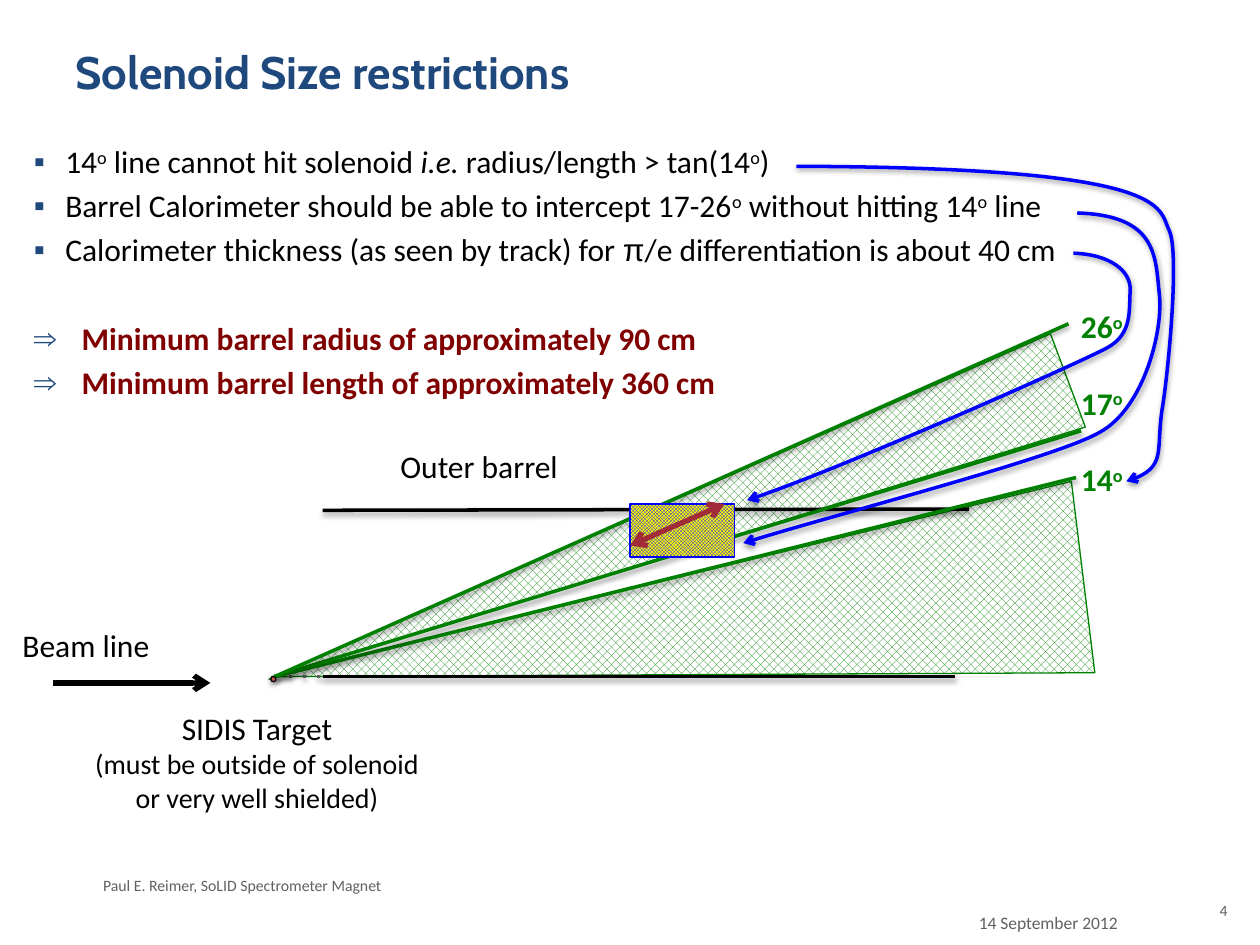
import lxml.etree
import pptx
import pptx.dml.color
import pptx.enum.dml
import pptx.enum.shapes
import pptx.enum.text
import pptx.oxml.ns
import pptx.util

COLUMNS, ROWS = 10, 7.5
CELL = pptx.util.Inches(1)
GREEN, BLUE, BLACK, GREY, NAVY = "008000", "0000FF", "000000", "616161", "1F497D"
ALIGN = pptx.enum.text.PP_ALIGN
PATTERN = pptx.enum.dml.MSO_PATTERN
SHAPE = pptx.enum.shapes.MSO_SHAPE


def grid(*cells):
    """Turn grid cells into slide lengths."""
    return [pptx.util.Emu(round(cell * CELL)) for cell in cells]


def colour(value):
    """Turn a hex string into a colour."""
    return pptx.dml.color.RGBColor.from_string(value)


def add_element(parent, tag, **attributes):
    """Append a drawing element to its parent."""
    child = lxml.etree.SubElement(parent, pptx.oxml.ns.qn(tag))
    for name, value in attributes.items():
        child.set(name, str(value))
    return child


def style_outline(shape, line_colour, width, ends=(), shadow=False, dash=None):
    """Set the line, arrowheads and shadow of a shape."""
    shape.line.color.rgb = colour(line_colour)
    shape.line.width = pptx.util.Pt(width)
    outline = shape.line._get_or_add_ln()
    if dash:
        add_element(outline, "a:prstDash", val=dash)
    for end in ends:
        add_element(outline, f"a:{end}End", type="arrow")
    effects = add_element(shape._element.spPr, "a:effectLst")
    if shadow:
        outer = add_element(effects, "a:outerShdw", blurRad=pptx.util.Pt(3.1),
                            dist=pptx.util.Pt(1.6), dir=5400000, rotWithShape=0)
        add_element(add_element(outer, "a:srgbClr", val=BLACK), "a:alpha", val=38000)


def add_line(page, start, finish, line_colour, width=2, **style):
    """Draw a straight line between two grid points."""
    line = page.shapes.add_connector(
        pptx.enum.shapes.MSO_CONNECTOR.STRAIGHT, *grid(*start, *finish))
    style_outline(line, line_colour, width, **style)


def add_patterned(page, kind, place, pattern, front, back, rotation=0):
    """Draw a shape with a pattern fill."""
    shape = page.shapes.add_shape(kind, *grid(*place))
    shape.rotation = rotation
    shape.fill.patterned()
    shape.fill.pattern = pattern
    shape.fill.fore_color.rgb = colour(front)
    shape.fill.back_color.rgb = colour(back)
    style_outline(shape, front, 0.75)


def add_curve(page, start, segments):
    """Draw a smooth arrow through cubic segments."""
    builder = page.shapes.build_freeform(*grid(*start), scale=1)
    builder.add_line_segments([grid(*segment[-1]) for segment in segments], close=False)
    curve = builder.convert_to_shape()
    straight = list(curve._element.spPr.iter(pptx.oxml.ns.qn("a:lnTo")))
    for part, segment in zip(straight, segments):
        bend = add_element(part.getparent(), "a:cubicBezTo")
        for point in segment:
            x, y = grid(*point)
            add_element(bend, "a:pt", x=x - curve.left, y=y - curve.top)
        part.getparent().remove(part)
    curve.fill.background()
    style_outline(curve, BLUE, 2, ends=["tail"], shadow=True)


def write_runs(para, text, size, text_colour, bold=False):
    """Write a paragraph in which carets enclose superscripts and underscores italics."""
    for index, part in enumerate(text.split("^")):
        for turn, piece in enumerate(part.split("_")):
            for order, words in enumerate(piece.partition("π")):
                if not words:
                    continue
                span = para.add_run()
                span.text = words
                span.font.name = "Arial" if order == 1 else "Calibri"
                span.font.size = pptx.util.Pt(size)
                span.font.bold = bold
                span.font.italic = turn % 2 == 1
                span.font.color.rgb = colour(text_colour)
                if index % 2:
                    span.font._element.set("baseline", "30000")


def add_text(page, place, lines, text_colour=BLACK, align=ALIGN.LEFT,
             wrap=True, gap=0, bold=False):
    """Add a text box from pairs of text and size."""
    box = page.shapes.add_textbox(*grid(*place))
    frame = box.text_frame
    frame.word_wrap = wrap
    for index, (text, size) in enumerate(lines):
        para = frame.add_paragraph() if index else frame.paragraphs[0]
        para.alignment = align
        para.space_before = pptx.util.Pt(gap if index else 0)
        write_runs(para, text, size, text_colour, bold)


def place_title(page, place):
    """Move and format the title."""
    title = page.shapes.title
    title.left, title.top, title.width, title.height = grid(*place)
    frame = title.text_frame
    frame.text = "Solenoid Size restrictions"
    frame.vertical_anchor = pptx.enum.text.MSO_ANCHOR.TOP
    frame.paragraphs[0].alignment = ALIGN.LEFT
    font = frame.paragraphs[0].runs[0].font
    font.name, font.size, font.bold = "Cabin", pptx.util.Pt(26), True
    font.color.rgb = colour(NAVY)


def place_bullets(page, place):
    """List the restrictions and their conclusions."""
    facts = ["14^o^ line cannot hit solenoid _i.e. _radius/length > tan(14^o^)",
             "Barrel Calorimeter should be able to intercept 17-26^o^ without hitting 14^o^ line",
             "Calorimeter thickness (as seen by track) for π/e differentiation is about 40 cm"]
    results = ["Minimum barrel radius of approximately 90 cm",
               "Minimum barrel length of approximately 360 cm"]
    frame = page.shapes.add_textbox(*grid(*place)).text_frame
    frame.word_wrap = True
    for index, text in enumerate(facts + results):
        result = index >= len(facts)
        para = frame.add_paragraph() if index else frame.paragraphs[0]
        gap = 29.2 if index == len(facts) else 3.6
        para.space_before = pptx.util.Pt(gap if index else 0)
        indent = grid(0.38 if result else 0.25)[0]
        properties = para._p.get_or_add_pPr()
        properties.set("marL", str(indent))
        properties.set("indent", str(-indent))
        add_element(add_element(properties, "a:buClr"), "a:srgbClr", val=NAVY)
        add_element(properties, "a:buFont", typeface="Arial")
        add_element(properties, "a:buChar", char="⇒" if result else "▪")
        write_runs(para, text, 18, "800000" if result else BLACK, result)


def place_detector(page, box):
    """Draw barrel, acceptance wedges, tracks and calorimeter from the target."""
    left, top, width, height = box
    target = (left, top + height)
    right = left + width
    for place, turn in [((left + 2.43, top - 0.84, 1.53, 6.49), 263),
                        ((left + 2.73, top - 1.75, 0.79, 6.77), 249.5)]:
        add_patterned(page, SHAPE.ISOSCELES_TRIANGLE, place, PATTERN.PERCENT_50,
                      GREEN, "FFFFFF", turn)
    inner = left + 0.38
    add_line(page, (inner, top + 1.48), (right - 0.89, top + 1.47), BLACK, shadow=True)
    add_line(page, (inner, target[1]), (right - 1, target[1]), BLACK, shadow=True)
    add_line(page, target, (inner, target[1]), GREY, shadow=True, dash="dot")
    for finish in [(right - 0.04, top + 1.22), (right, top + 0.85), (right - 0.1, top)]:
        add_line(page, target, finish, GREEN, shadow=True)
    dot = page.shapes.add_shape(SHAPE.OVAL, *grid(left - 0.03, target[1], 0.04, 0.04))
    dot.fill.solid()
    dot.fill.fore_color.rgb = colour("C0504D")
    style_outline(dot, BLACK, 0.75, shadow=True)
    add_text(page, (right - 0.1, top - 0.18, 0.55, 1.62),
             [(f"{angle}^o^", 18) for angle in (26, 17, 14)], GREEN,
             wrap=False, gap=22, bold=True)
    add_patterned(page, SHAPE.RECTANGLE, (left + 2.82, top + 1.43, 0.83, 0.42),
                  PATTERN.SMALL_CHECKER_BOARD, BLUE, "FFFF00")
    add_line(page, (left + 2.82, top + 1.76), (left + 3.57, top + 1.43), "A22B38", 3,
             ends=["head", "tail"])
    add_text(page, (left + 0.9, top + 0.93, 1.47, 0.4), [("Outer barrel", 18)], wrap=False)


def place_beam(page, box):
    """Label the beam line and the target."""
    left, top, width, height = box
    add_text(page, (left, top, 1.22, 0.4), [("Beam line", 18)], wrap=False)
    add_line(page, (left + 0.34, top + 0.5), (left + 1.59, top + 0.5), BLACK, 3, ends=["tail"])
    add_text(page, (left + 0.5, top + 0.66, width - 0.5, height - 0.66),
             [("SIDIS Target", 18),
              ("(must be outside of solenoid or very well shielded)", 16)], align=ALIGN.CENTER)


def place_pointers(page):
    """Lead from each restriction to the part it concerns."""
    add_curve(page, (8.55, 1.69), [((9.18, 1.71), (9.17, 2.03), (9.2, 2.32)),
                                   ((9.24, 2.61), (9.08, 3.24), (8.73, 3.43)),
                                   ((8.39, 3.63), (6.56, 4.1), (5.9, 4.31))])
    add_curve(page, (8.52, 2.01), [((8.81, 2.02), (8.98, 2.15), (8.97, 2.31)),
                                   ((8.96, 2.46), (8.99, 2.65), (8.79, 2.76)),
                                   ((8.59, 2.87), (6.59, 3.76), (5.93, 3.97))])
    add_curve(page, (6.32, 1.32), [((9.33, 1.33), (9.19, 1.65), (9.28, 1.83)),
                                   ((9.36, 2), (9.28, 2.88), (9.23, 3.21)),
                                   ((9.17, 3.55), (9.28, 3.72), (8.94, 3.82))])


def place_footer(page, box):
    """Write author, date and page number."""
    left, top, width, height = box
    add_text(page, (left, top, 6.5, 0.25), [("Paul E. Reimer, SoLID Spectrometer Magnet", 9)], GREY)
    add_text(page, (left + 6.95, top + 0.29, 1.5, 0.23), [("14 September 2012", 10)], GREY)
    add_text(page, (left + width - 0.42, top + 0.2, 0.42, height - 0.2), [("4", 9)], GREY, ALIGN.RIGHT)


def main():
    """Build and save the deck."""
    deck = pptx.Presentation()
    deck.slide_width, deck.slide_height = grid(COLUMNS, ROWS)
    page = deck.slides.add_slide(deck.slide_layouts[5])
    place_title(page, (0.5, 0.3, 9, 0.7))
    place_detector(page, (2.18, 2.57, 6.4, 2.8))
    place_beam(page, (0.08, 4.92, 3.42, 1.6))
    place_bullets(page, (0.17, 1.08, 9.17, 2.33))
    place_pointers(page)
    place_footer(page, (0.72, 6.9, 9.12, 0.6))
    deck.save("out.pptx")


if __name__ == "__main__":
    main()
